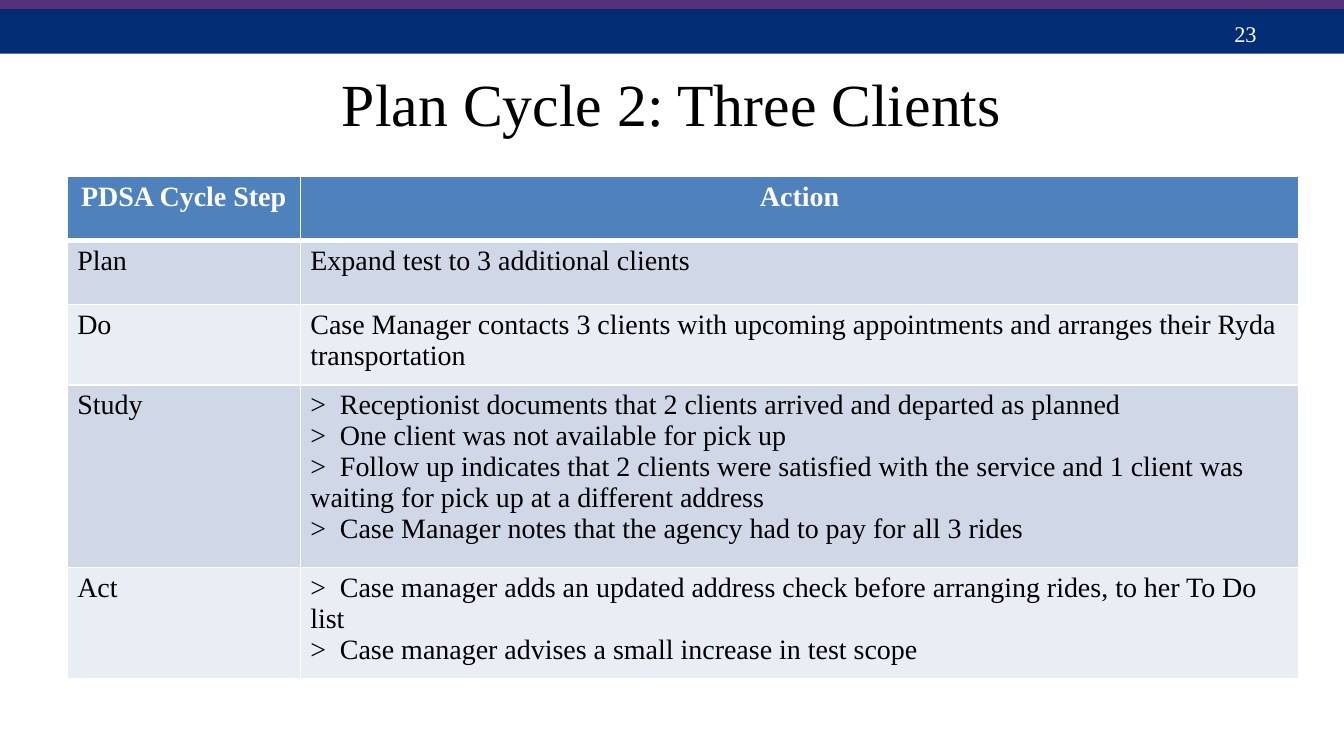
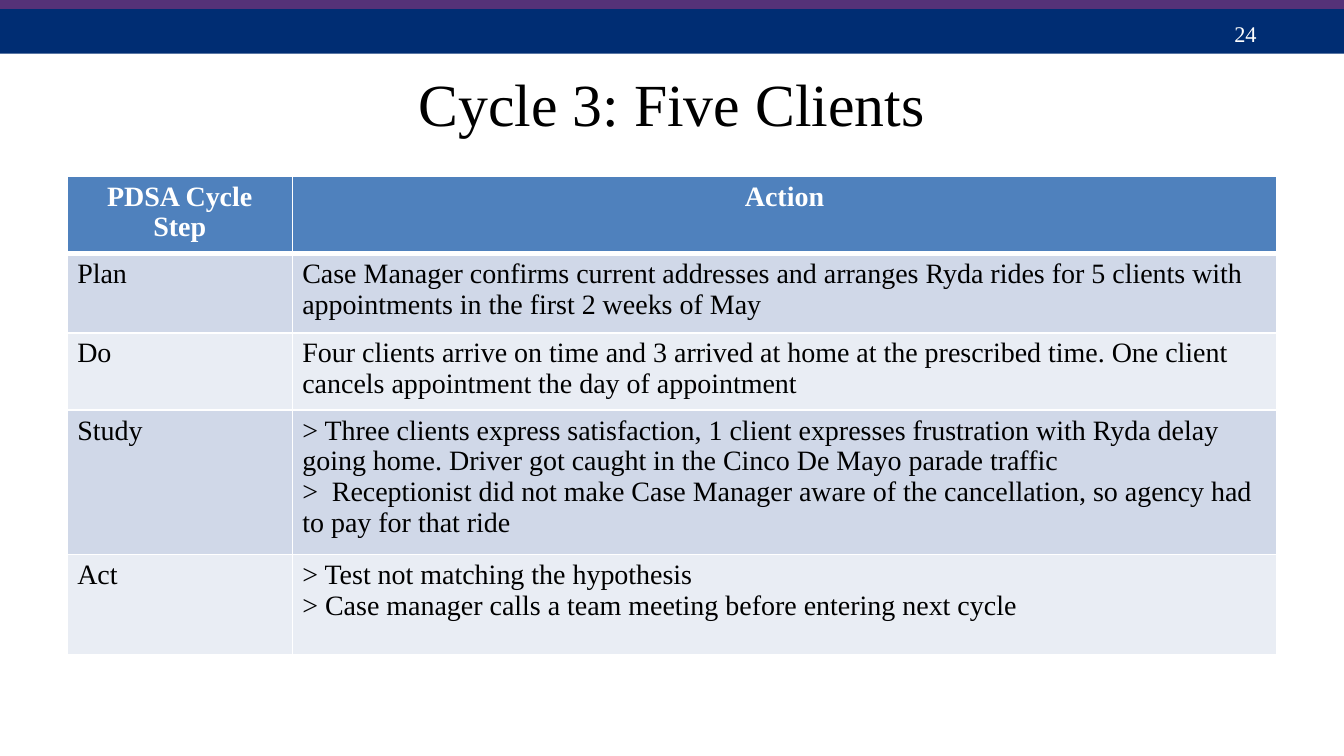
from lxml import etree
from pptx import Presentation
from pptx import util as u
from pptx.dml import color
from pptx.enum import shapes, text
from pptx.oxml import ns

COLOURS = {
    "navy": "002D73", "purple": "553278", "header": "4F81BD",
    "dark_row": "D0D8E8", "light_row": "E9EDF4",
    "white": "FFFFFF", "black": "000000",
}
FONT = "Times New Roman"
WIDTH, HEIGHT = u.Inches(10), u.Pt(405)
TITLE_ONLY = 5
HEADINGS = ("PDSA Cycle Step", "Action")

CYCLES = [
    {
        "number": 23,
        "title": "Plan Cycle 2: Three Clients",
        "columns": (17.35, 74.3),
        "rows": (8.5, 8.5, 10.6, 24.2, 10.3),
        "steps": {
            "Plan": ["Expand test to 3 additional clients"],
            "Do": ["Case Manager contacts 3 clients with upcoming appointments "
                   "and arranges their Ryda transportation"],
            "Study": [
                ">\tReceptionist documents that 2 clients arrived and departed as planned",
                ">\tOne client was not available for pick up",
                ">\tFollow up indicates that 2 clients were satisfied with the service "
                "and 1 client was waiting for pick up at a different address",
                ">\tCase Manager notes that the agency had to pay for all 3 rides",
            ],
            "Act": [
                ">\tCase manager adds an updated address check before arranging rides, "
                "to her To Do list",
                ">\tCase manager advises a small increase in test scope",
            ],
        },
    },
    {
        "number": 24,
        "title": "Cycle 3: Five Clients",
        "columns": (16.75, 73.25),
        "rows": (9.4, 10.5, 10.15, 19, 13.2),
        "steps": {
            "Plan": ["Case Manager confirms current addresses and arranges Ryda rides "
                     "for 5 clients with appointments in the first 2 weeks of May"],
            "Do": ["Four clients arrive on time and 3 arrived at home at the prescribed "
                   "time. One client cancels appointment the day of appointment"],
            "Study": [
                "> Three clients express satisfaction, 1 client expresses frustration "
                "with Ryda delay going home. Driver got caught in the Cinco De Mayo "
                "parade traffic",
                ">\tReceptionist did not make Case Manager aware of the cancellation, "
                "so agency had to pay for that ride",
            ],
            "Act": [
                "> Test not matching the hypothesis",
                "> Case manager calls a team meeting before entering next cycle",
            ],
        },
    },
]


def rgb(name):
    return color.RGBColor.from_string(COLOURS[name])


def across(percent):
    return round(WIDTH * percent / 100)


def down(percent):
    return round(HEIGHT * percent / 100)


def box(left, top, width, height):
    return across(left), down(top), across(width), down(height)


def format_text(text_frame, size, colour, bold=False, align=None):
    for paragraph in text_frame.paragraphs:
        paragraph.alignment = align
        for run in paragraph.runs:
            run.font.name = FONT
            run.font.size = u.Pt(size)
            run.font.bold = bold
            run.font.color.rgb = rgb(colour)


def add_band(slide, area, colour):
    band = slide.shapes.add_shape(shapes.MSO_SHAPE.RECTANGLE, *area)
    band.shadow.inherit = False
    band.fill.solid()
    band.fill.fore_color.rgb = rgb(colour)
    band.line.fill.background()


def add_page_header(slide, number):
    add_band(slide, box(0, 1.2, 100, 5.9), "navy")
    add_band(slide, box(0, 0, 100, 1.2), "purple")
    number_box = slide.shapes.add_textbox(*box(90.85, 1.75, 7.5, 5.3))
    number_box.text_frame.word_wrap = True
    number_box.text_frame.text = str(number)
    format_text(number_box.text_frame, 12, "white")


def set_title(slide, wording, area):
    title = slide.shapes.title
    title.left, title.top, title.width, title.height = area
    title.text_frame.text = wording
    title.text_frame.vertical_anchor = text.MSO_ANCHOR.MIDDLE
    format_text(title.text_frame, 32, "black", align=text.PP_ALIGN.CENTER)


def set_borders(cell, widths):
    properties = cell._tc.get_or_add_tcPr()
    for side, points in widths.items():
        line = etree.SubElement(properties, ns.qn(f"a:ln{side}"), w=str(u.Pt(points)))
        fill = etree.SubElement(line, ns.qn("a:solidFill"))
        etree.SubElement(fill, ns.qn("a:srgbClr"), val=COLOURS["white"])


def add_marker_tab(paragraph):
    tabs = etree.SubElement(paragraph._p.get_or_add_pPr(), ns.qn("a:tabLst"))
    etree.SubElement(tabs, ns.qn("a:tab"), pos=str(across(2.2)), algn="l")


def fill_cell(cell, row, lines):
    is_header = row == 0
    set_borders(cell, {"L": 1, "R": 1, "T": 3 if row == 1 else 1, "B": 3 if is_header else 1})
    cell.fill.solid()
    cell.fill.fore_color.rgb = rgb("header" if is_header else "dark_row" if row % 2 else "light_row")
    cell.margin_left = cell.margin_right = u.Pt(5.4)
    cell.margin_top = cell.margin_bottom = u.Pt(2.7)
    cell.text_frame.text = "\n".join(lines)
    for paragraph, line in zip(cell.text_frame.paragraphs, lines):
        if "\t" in line:
            add_marker_tab(paragraph)
    format_text(cell.text_frame, 15, "white" if is_header else "black", is_header,
                text.PP_ALIGN.CENTER if is_header else None)


def add_cycle_table(slide, cycle, left, top):
    columns, rows = cycle["columns"], cycle["rows"]
    area = box(left, top, sum(columns), sum(rows))
    table = slide.shapes.add_table(len(rows), len(columns), *area).table
    table.horz_banding = False
    for column, width in zip(table.columns, columns):
        column.width = across(width)
    for row, height in zip(table.rows, rows):
        row.height = down(height)
    contents = [[[heading] for heading in HEADINGS]]
    contents += [[[step], actions] for step, actions in cycle["steps"].items()]
    for row, cells in enumerate(contents):
        for column, lines in enumerate(cells):
            fill_cell(table.cell(row, column), row, lines)


def add_cycle_slide(presentation, cycle):
    slide = presentation.slides.add_slide(presentation.slide_layouts[TITLE_ONLY])
    add_page_header(slide, cycle["number"])
    set_title(slide, cycle["title"], box(5, 5.2, 90, 16.7))
    add_cycle_table(slide, cycle, 5, 23.3)


def main():
    presentation = Presentation()
    presentation.slide_width, presentation.slide_height = WIDTH, HEIGHT
    for cycle in CYCLES:
        add_cycle_slide(presentation, cycle)
    presentation.save("out.pptx")


if __name__ == "__main__":
    main()
